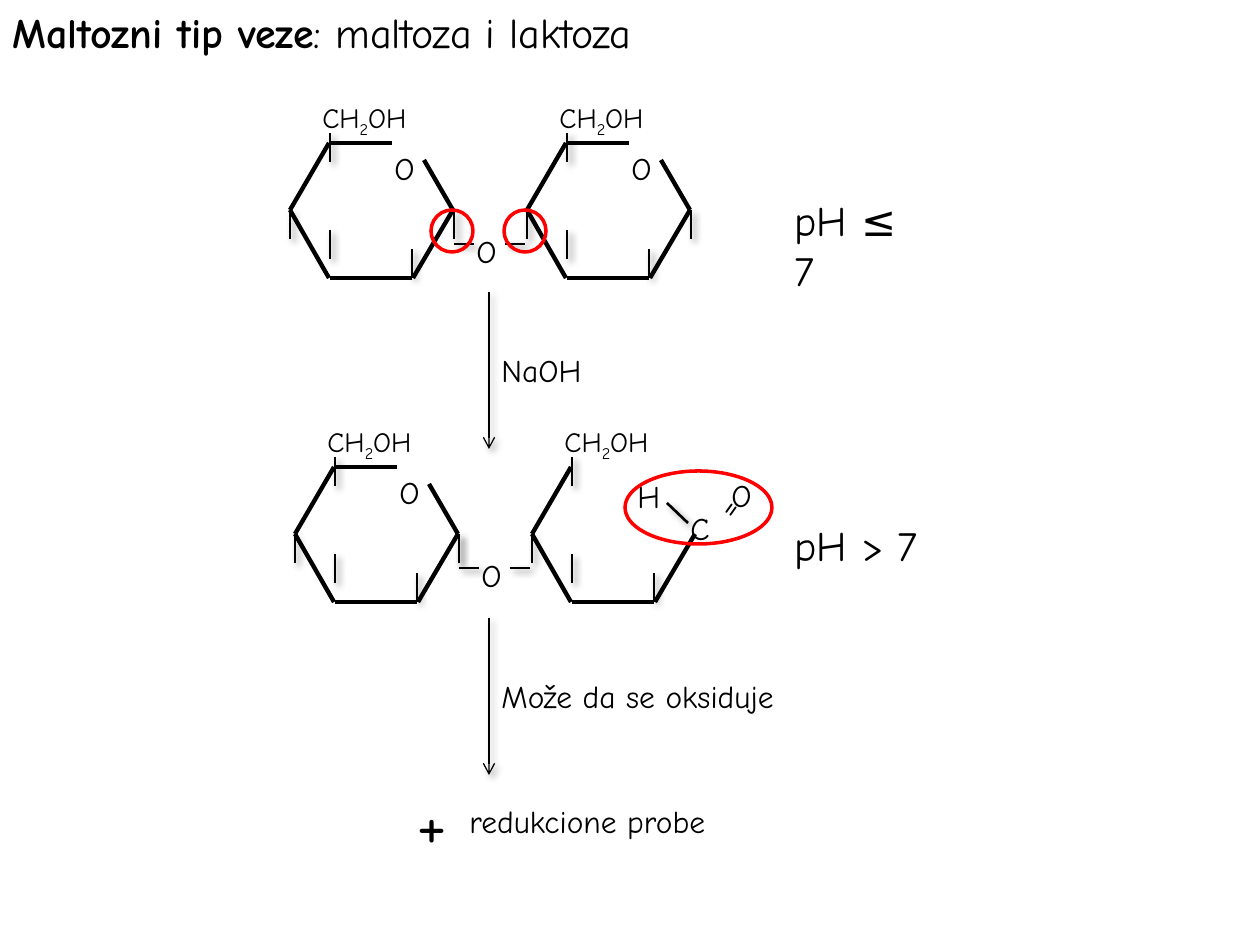
from lxml.etree import SubElement
from pptx import Presentation
from pptx.dml.color import RGBColor
from pptx.enum.shapes import MSO_CONNECTOR as CONN, MSO_SHAPE as SHAPE
from pptx.enum.text import MSO_ANCHOR as ANCHOR, MSO_AUTO_SIZE as AUTO, PP_ALIGN as ALIGN
from pptx.oxml.ns import qn
from pptx.util import Inches, Pt

COLORS = {"ink": "000000", "mark": "FF0000"}
FONT = "Comic Neue"
SCALE = Inches(1) / 126

UPPER_LEFT = (39, 0, 0, 67)
LOWER_LEFT = (39, 135, 0, 67)
BOTTOM = (122, 135, 40, 135)
LOWER_RIGHT = (163, 67, 123, 135)
OPEN_CHAIN = [LOWER_LEFT, UPPER_LEFT, BOTTOM, LOWER_RIGHT]
CLOSED_RING = OPEN_CHAIN + [(102, 0, 40, 0), (163, 67, 134, 17)]
TICKS = [(122, 106), (40, 87), (0, 67), (40, -10)]
RIGHT_TICK = (164, 67)
TICK = 29


def px(n):
    return round(n * SCALE)


def rgb(name):
    return RGBColor.from_string(COLORS[name])


def add_run(p, text, size=18, bold=False, color="ink", baseline=0):
    r = p.add_run()
    r.text = text
    r.font.name = FONT
    r.font.size = Pt(size)
    r.font.bold = bold
    r.font.color.rgb = rgb(color)
    if baseline:
        r.font.size = Pt(size)
        r._r.get_or_add_rPr().set("baseline", str(baseline * 1000))


class Board:
    def __init__(self, prs):
        self.s = prs.slides.add_slide(prs.slide_layouts[5])

    def title(self, x, y, w, h, lead, rest):
        sp = self.s.shapes.title
        sp.left, sp.top, sp.width, sp.height = map(px, (x, y, w, h))
        tf = sp.text_frame
        tf.word_wrap = False
        tf.auto_size = AUTO.SHAPE_TO_FIT_TEXT
        tf.vertical_anchor = ANCHOR.TOP
        p = tf.paragraphs[0]
        p.alignment = ALIGN.LEFT
        add_run(p, lead, size=24, bold=True)
        add_run(p, rest, size=24)

    def text(self, x, y, w, h, text, wrap=False, rotation=0, **fmt):
        sp = self.s.shapes.add_textbox(*map(px, (x, y, w, h)))
        sp.rotation = rotation
        tf = sp.text_frame
        tf.word_wrap = wrap
        tf.auto_size = AUTO.SHAPE_TO_FIT_TEXT
        p = tf.paragraphs[0]
        if text:
            add_run(p, text, **fmt)
        return p

    def line(self, x1, y1, x2, y2, width=1.5, shadow=True, arrow=False, group=None):
        shapes = (group or self.s).shapes
        c = shapes.add_connector(CONN.STRAIGHT, *map(px, (x1, y1, x2, y2)))
        c.line.color.rgb = rgb("ink")
        c.line.width = Pt(width)
        if arrow:
            SubElement(c.line._get_or_add_ln(), qn("a:tailEnd"), type="arrow")
        effects = SubElement(c._element.spPr, qn("a:effectLst"))
        if shadow:
            shade = SubElement(effects, qn("a:outerShdw"), blurRad=str(Pt(4)),
                               dist=str(Pt(3)), dir=str(45 * 60000), rotWithShape="0")
            clr = SubElement(shade, qn("a:srgbClr"), val=COLORS["ink"])
            SubElement(clr, qn("a:alpha"), val="40000")

    def ellipse(self, x, y, w, h):
        sp = self.s.shapes.add_shape(SHAPE.OVAL, *map(px, (x, y, w, h)))
        sp.shadow.inherit = False
        sp.fill.background()
        sp.line.color.rgb = rgb("mark")
        sp.line.width = Pt(2)

    def sugar(self, x, y, closed=True):
        group = self.s.shapes.add_group_shape()
        for x1, y1, x2, y2 in CLOSED_RING if closed else OPEN_CHAIN:
            self.line(x + x1, y + y1, x + x2, y + y2, 2.5, False, group=group)
        for dx, dy in TICKS + ([RIGHT_TICK] if closed else []):
            self.line(x + dx, y + dy, x + dx, y + dy + TICK)
        if closed:
            self.text(x + 92, y, 50, 47, "O")
        p = self.text(x + 20, y - 49, 117, 43, "")
        add_run(p, "CH", size=16)
        add_run(p, "2", size=16, baseline=-25)
        add_run(p, "OH", size=16)

    def disaccharide(self, x, y, closed=True):
        self.sugar(x, y)
        self.sugar(x + 237, y, closed)
        if not closed:
            self.line(*[a + b for a, b in zip((x, y) * 2, (*RIGHT_TICK, 164, 96))])
        self.text(x + 174, y + 83, 50, 47, "O")
        for dx in (164, 215):
            self.line(x + dx, y + 101, x + dx + 20, y + 101)

    def reaction(self, y, label, width):
        self.line(489, y, 489, y + 157, 0.75, arrow=True)
        self.text(489, y + 53, width, 50, label)


def main():
    prs = Presentation()
    prs.slide_width, prs.slide_height = Inches(10), Inches(7.5)
    b = Board(prs)
    b.title(0, 0, 737, 64, "Maltozni tip veze", ": maltoza i laktoza")

    b.disaccharide(290, 143)
    for x in (431, 504):
        b.ellipse(x, 210, 42, 42)
    b.text(782, 188, 160, 63, "pH ≤ 7", wrap=True, size=24)
    b.reaction(292, "NaOH", 117)

    b.disaccharide(295, 467, closed=False)
    b.line(667, 503, 688, 523)
    b.text(625, 471, 50, 50, "H")
    b.text(697, 483, 59, 50, " =", wrap=True, rotation=305.5)
    b.text(678, 503, 44, 50, "C")
    b.text(719, 470, 50, 47, "O")
    b.ellipse(625, 471, 147, 73)
    b.text(782, 513, 160, 63, "pH > 7", size=24)
    b.reaction(618, "Može da se oksiduje", 325)

    b.text(404, 772, 59, 97, "+", size=40)
    b.text(457, 796, 281, 50, "redukcione probe")
    prs.save("out.pptx")


if __name__ == "__main__":
    main()
